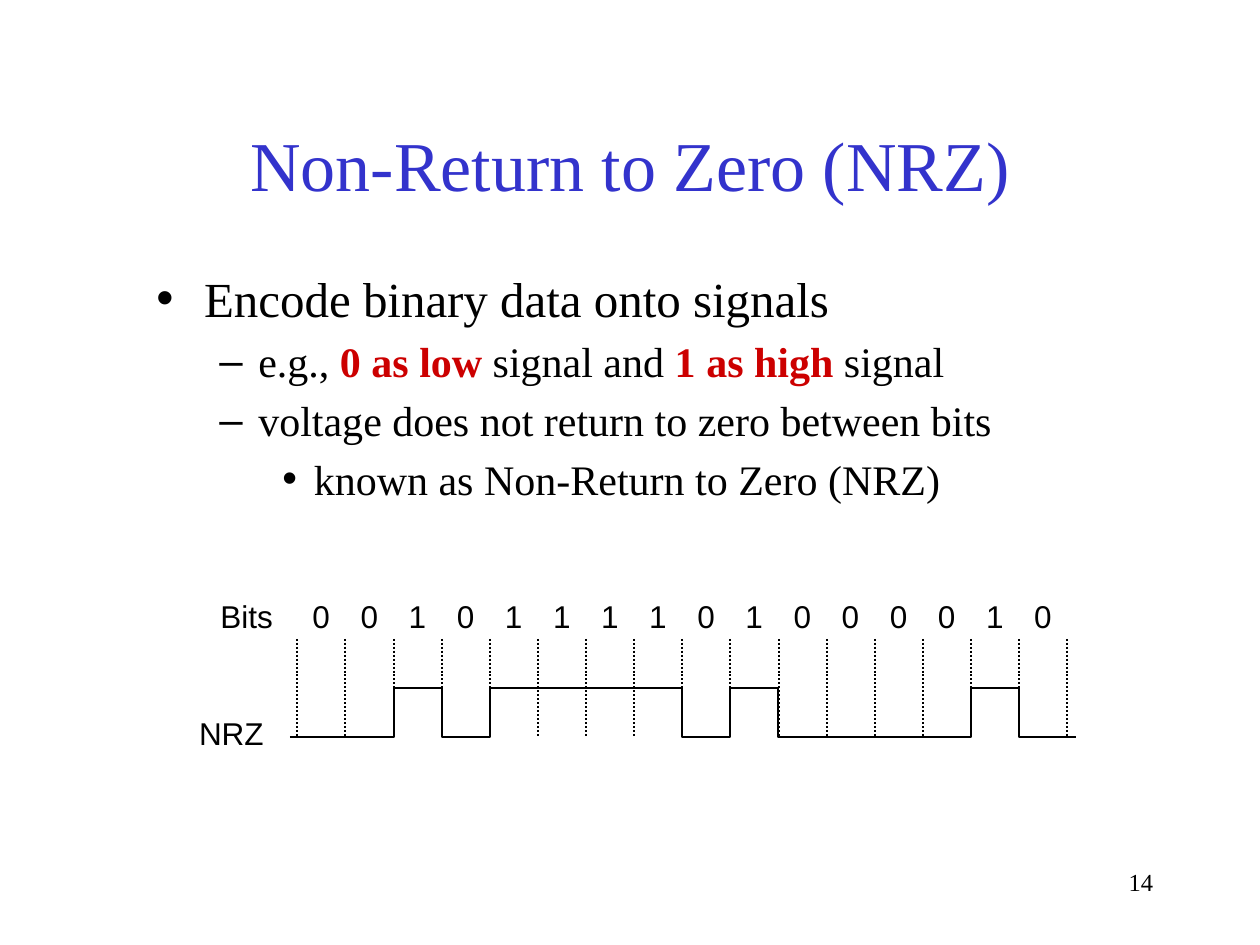
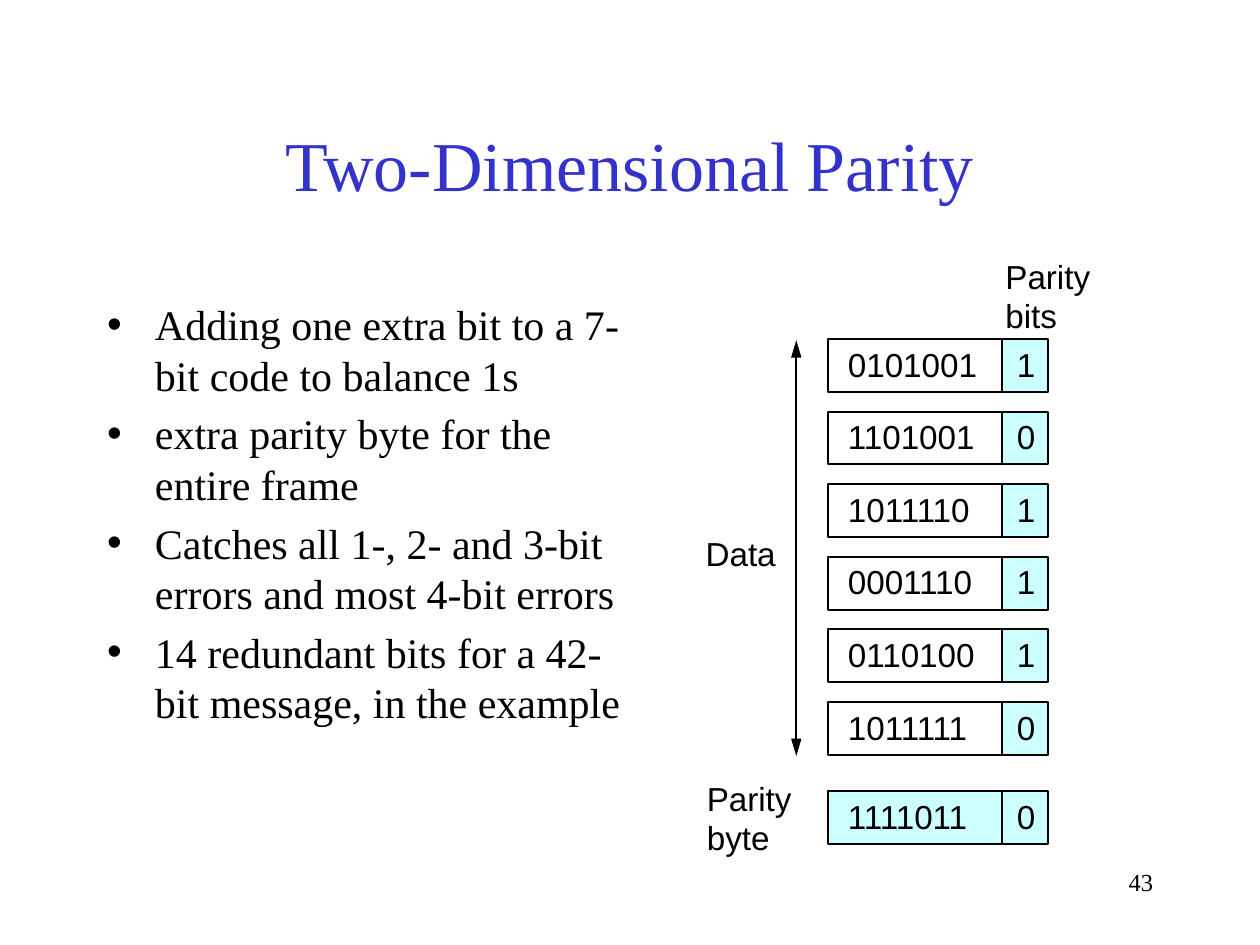
"""Build two lecture slides: NRZ signal encoding and two-dimensional parity."""
from lxml import etree
from pptx import Presentation, util as u
from pptx.dml.color import RGBColor
from pptx.enum import dml, shapes, text
from pptx.oxml.ns import qn

SERIF, SANS = "Times New Roman", "Arial"
BLACK, BLUE, RED, CYAN = "000000", "3333CC", "CC0000", "CCFFFF"
BULLETS = [("•", 0.38, 0.38), ("–", 0.81, 0.31), ("•", 1.25, 0.25)]


def paint(fill, color):
    fill.solid()
    fill.fore_color.rgb = RGBColor.from_string(color)


def write(paragraph, words, size=24, font=SERIF, color=BLACK, bold=False):
    run = paragraph.add_run()
    run.text = words
    run.font.size = u.Pt(size)
    run.font.name = font
    run.font.bold = bold
    paint(run.font.fill, color)


nrz_points = [
    (0, 28, [("Encode binary data onto signals", False)]),
    (1, 24, [("e.g., ", False), ("0 as low", True), (" signal and ", False),
             ("1 as high", True), (" signal", False)]),
    (1, 24, [("voltage does not return to zero between bits", False)]),
    (2, 24, [("known as Non-Return to Zero (NRZ)", False)]),
]
parity_points = [(0, 24, [(words, False)]) for words in (
    "Adding one extra bit to a 7-bit code to balance 1s",
    "extra parity byte for the entire frame",
    "Catches all 1-, 2- and 3-bit errors and most 4-bit errors",
    "14 redundant bits for a 42-bit message, in the example",
)]
pages = [
    ("Non-Return to Zero (NRZ)", "14", (1.14, 2.08, 8.11, 2.46), nrz_points),
    ("Two-Dimensional Parity", "43", (0.75, 2.32, 4.31, 4.35), parity_points),
]

prs = Presentation()
prs.slide_width, prs.slide_height = u.Inches(10), u.Inches(7.5)

for heading, number, area, points in pages:
    slide = prs.slides.add_slide(prs.slide_layouts[1])
    paint(slide.background.fill, "FFFFFF")

    title, body = slide.shapes.title, slide.placeholders[1]
    for holder, place in ((title, (0.75, 0.67, 8.5, 1.25)), (body, area)):
        holder.left, holder.top, holder.width, holder.height = map(u.Inches, place)
        holder.text_frame.word_wrap = True
        holder.text_frame.auto_size = text.MSO_AUTO_SIZE.NONE
    title.text_frame.vertical_anchor = text.MSO_ANCHOR.MIDDLE
    title.text_frame.paragraphs[0].alignment = text.PP_ALIGN.CENTER
    write(title.text_frame.paragraphs[0], heading, size=40, color=BLUE)

    for index, (level, size, parts) in enumerate(points):
        frame = body.text_frame
        point = frame.add_paragraph() if index else frame.paragraphs[0]
        point.level = level
        mark, margin, hanging = BULLETS[level]
        properties = point._p.get_or_add_pPr()
        properties.set("marL", str(u.Inches(margin)))
        properties.set("indent", str(-u.Inches(hanging)))
        etree.SubElement(properties, qn("a:buChar"), char=mark)
        point.space_before = u.Pt(0.2 * size if index else 0)
        for words, strong in parts:
            write(point, words, size=size, color=RED if strong else BLACK, bold=strong)

    footer = slide.shapes.add_textbox(*map(u.Inches, (7.17, 6.83, 2.08, 0.5))).text_frame
    footer.word_wrap = True
    footer.paragraphs[0].alignment = text.PP_ALIGN.RIGHT
    write(footer.paragraphs[0], number, size=14)

nrz, parity = prs.slides

bits = "0010111101000010"
first_edge, last_edge = 2.36, 8.47
bit_width = (last_edge - first_edge) / len(bits)
tick_top, high, low = 5.07, 5.46, 5.85
nrz_labels = [("Bits", 1.75, 4.74, 0.44), ("NRZ", 1.58, 5.67, 0.54)]
signal_points = []
for index, bit in enumerate(bits):
    edge = first_edge + index * bit_width
    level = high if bit == "1" else low
    nrz_labels.append((bit, edge + 0.12, 4.74, 0.14))
    signal_points += [(edge, level), (edge + bit_width, level)]
signal_points.append((8.54, low))

for index in range(len(bits) + 1):
    edge = first_edge + index * bit_width
    tick = nrz.shapes.add_connector(
        shapes.MSO_CONNECTOR.STRAIGHT, *map(u.Inches, (edge, tick_top, edge, low)))
    tick.line.dash_style = dml.MSO_LINE.ROUND_DOT

outline = nrz.shapes.build_freeform(u.Inches(2.3), u.Inches(low))
outline.add_line_segments(
    [(u.Inches(x), u.Inches(y)) for x, y in signal_points], close=False)
signal = outline.convert_to_shape()
signal.fill.background()

code_left, parity_left, row_right, row_height = 6.57, 7.95, 8.32, 0.42
first_row, last_data_row, parity_byte_row = 2.69, 5.57, 6.28
codewords = ["0101001 1", "1101001 0", "1011110 1", "0001110 1",
             "0110100 1", "1011111 0", "1111011 0"]
row_pitch = (last_data_row - first_row) / (len(codewords) - 2)
parity_labels = [
    ("Parity", 7.98, 2.03, 0.7), ("bits", 7.98, 2.34, 0.43),
    ("Parity", 5.61, 6.18, 0.7), ("byte", 5.61, 6.49, 0.52),
    ("Data", 5.6, 4.23, 0.58),
]
for index, codeword in enumerate(codewords):
    is_parity_byte = index == len(codewords) - 1
    top = parity_byte_row if is_parity_byte else first_row + index * row_pitch
    shaded_left = code_left if is_parity_byte else parity_left
    for left, shaded in ((shaded_left, True), (code_left, False)):
        cell = parity.shapes.add_shape(
            shapes.MSO_SHAPE.RECTANGLE,
            *map(u.Inches, (left, top, row_right - left, row_height)))
        if shaded:
            paint(cell.fill, CYAN)
            cell.line.fill.background()
        else:
            cell.fill.background()
    parity.shapes.add_connector(
        shapes.MSO_CONNECTOR.STRAIGHT,
        *map(u.Inches, (parity_left, top, parity_left, top + row_height)))
    code, parity_bit = codeword.split()
    parity_labels += [(code, 6.73, top + 0.04, 1.04), (parity_bit, 8.07, top + 0.04, 0.15)]

data_span = parity.shapes.add_connector(
    shapes.MSO_CONNECTOR.STRAIGHT, *map(u.Inches, (6.32, 2.7, 6.32, 6)))

for slide in (nrz, parity):
    for drawn in slide.shapes:
        if drawn.shape_type == shapes.MSO_SHAPE_TYPE.LINE:
            paint(drawn.line.fill, BLACK)
            drawn.line.width = u.Pt(1.13)
            etree.SubElement(drawn._element.spPr, qn("a:effectLst"))
        elif drawn.shape_type in (shapes.MSO_SHAPE_TYPE.AUTO_SHAPE,
                                  shapes.MSO_SHAPE_TYPE.FREEFORM):
            drawn.shadow.inherit = False
            if drawn.fill.type == dml.MSO_FILL.BACKGROUND:
                paint(drawn.line.fill, BLACK)
                drawn.line.width = u.Pt(1.13)

for end in ("a:headEnd", "a:tailEnd"):
    etree.SubElement(data_span.line._get_or_add_ln(), qn(end),
                     type="triangle", w="med", len="lg")

for slide, labels, size, height in ((nrz, nrz_labels, 18, 0.3),
                                    (parity, parity_labels, 19, 0.32)):
    for words, left, top, width in labels:
        label = slide.shapes.add_textbox(
            *map(u.Inches, (left, top, width, height))).text_frame
        label.margin_left = label.margin_right = label.margin_top = label.margin_bottom = 0
        label.word_wrap = False
        label.auto_size = text.MSO_AUTO_SIZE.SHAPE_TO_FIT_TEXT
        write(label.paragraphs[0], words, size=size, font=SANS)

prs.save("out.pptx")
